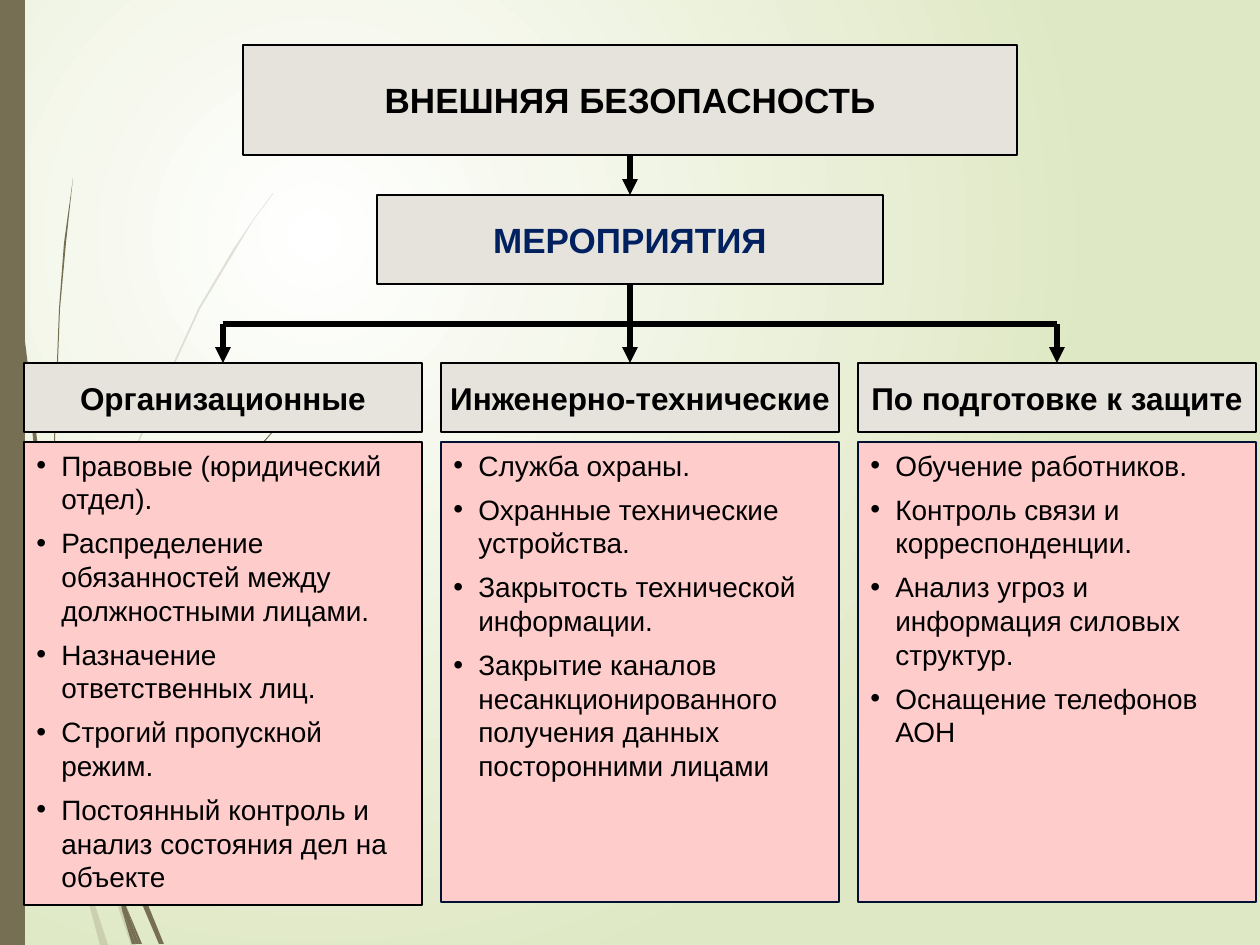
from dataclasses import dataclass

from lxml import etree
from pptx import Presentation
from pptx import util as u
from pptx.dml.color import RGBColor
from pptx.enum import shapes, text
from pptx.oxml.ns import qn


@dataclass(frozen=True)
class Theme:
    font: str = "Arial"
    ink: str = "000000"
    navy: str = "002060"
    list_edge: str = "001132"
    panel: str = "E5E3DB"
    pink: str = "FFCCCC"
    olive: str = "766F54"
    glow: str = "FFFFFF"
    meadow: str = "DFE8C4"
    title_size: int = 20
    heading_size: int = 18
    body_size: int = 16
    edge: float = 0.75
    arrow: int = 3


PX = 914400 / 126
WIDTH, HEIGHT = 1260, 945
COLUMN_LEFT, COLUMN_STEP, COLUMN_WIDTH = 24, 417, 398
HEADING_TOP, LIST_TOP, BRANCH_Y, CENTRE = 363, 442, 324, 630

FAINT_BLADES = [
    [(81, 765), (77, 751), (77, 769), (107, 874), (131, 945), (136, 945), (111, 872)],
    [(105, 945), (108, 945), (92, 896)],
    [(77, 736), (96, 582), (140, 440), (200, 309), (236, 249), (253, 221), (273, 194),
     (273, 193), (253, 220), (234, 248), (199, 307), (139, 438), (94, 581), (74, 736),
     (74, 738), (77, 751)],
    [(88, 900), (100, 945), (103, 945)],
    [(84, 872), (82, 861), (87, 891), (88, 900), (103, 945), (105, 945), (92, 896)],
]
DARK_BLADES = [
    [(6, 139), (18, 294), (34, 447), (58, 601), (59, 606), (57, 576), (57, 571),
     (38, 447), (19, 292), (8, 137), (5, 60), (4, 0), (3, 0), (4, 60)],
    [(118, 818), (115, 808), (115, 827), (137, 892), (159, 944), (164, 944), (142, 890)],
    [(63, 595), (60, 571), (55, 440), (60, 309), (66, 243), (73, 178), (64, 243),
     (59, 309), (54, 440), (57, 566), (62, 595)],
    [(139, 944), (142, 944), (126, 906)],
    [(115, 798), (130, 696), (165, 600), (213, 512), (241, 471), (256, 452), (272, 433),
     (271, 433), (255, 451), (241, 470), (212, 510), (163, 597), (127, 694), (111, 795),
     (115, 808)],
    [(122, 910), (132, 944), (136, 944)],
    [(121, 890), (115, 871), (121, 903), (122, 910), (136, 944), (139, 944), (126, 906)],
]

MEASURES = [
    ("Организационные", 463, Theme.ink, [
        "Правовые (юридический отдел).",
        "Распределение обязанностей между должностными лицами.",
        "Назначение ответственных лиц.",
        "Строгий пропускной режим.",
        "Постоянный контроль и анализ состояния дел на объекте"]),
    ("Инженерно-технические", 460, Theme.list_edge, [
        "Служба охраны.",
        "Охранные технические устройства.",
        "Закрытость технической информации.",
        "Закрытие каналов несанкционированного получения данных посторонними лицами"]),
    ("По подготовке к защите", 460, Theme.list_edge, [
        "Обучение работников.",
        "Контроль связи и корреспонденции.",
        "Анализ угроз и информация силовых структур.",
        "Оснащение телефонов АОН"]),
]


def px(length):
    return u.Emu(round(length * PX))


def rgb(value):
    return RGBColor.from_string(value)


def write(paragraph, words, size, color=Theme.ink, bold=False,
          align=text.PP_ALIGN.LEFT, before=0, bullet=False):
    paragraph.alignment = align
    paragraph.space_before = u.Pt(before)
    run = paragraph.add_run()
    run.text = words
    run.font.name = Theme.font
    run.font.size = u.Pt(size)
    run.font.bold = bold
    run.font.color.rgb = rgb(color)
    if bullet:
        props = paragraph._p.get_or_add_pPr()
        props.set("marL", str(px(25)))
        props.set("indent", str(px(-25)))
        etree.SubElement(props, qn("a:buFont"), typeface=Theme.font)
        etree.SubElement(props, qn("a:buChar"), char="•")


class Board:
    """Draws the scheme's elements on the current slide in one theme."""

    def __init__(self, slide, theme):
        self.slide = slide
        self.theme = theme

    def background(self):
        fill = self.slide.background.fill
        fill.gradient()
        for stop, color in zip(fill.gradient_stops, (self.theme.glow, self.theme.meadow)):
            stop.color.rgb = rgb(color)
        grad = self.slide.element.xpath(".//a:gradFill")[0]
        for linear in grad.findall(qn("a:lin")):
            grad.remove(linear)
        circle = etree.SubElement(grad, qn("a:path"), path="circle")
        etree.SubElement(circle, qn("a:fillToRect"),
                         l="50000", t="50000", r="100000", b="100000")

    def paint(self, shape, fill, edge=None):
        shape.shadow.inherit = False
        shape.fill.solid()
        shape.fill.fore_color.rgb = rgb(fill)
        if edge:
            shape.line.color.rgb = rgb(edge)
            shape.line.width = u.Pt(self.theme.edge)
        else:
            shape.line.fill.background()
        return shape

    def blade(self, points, opacity=100):
        builder = self.slide.shapes.build_freeform(*points[0], scale=PX)
        builder.add_line_segments(points[1:], close=True)
        shape = self.paint(builder.convert_to_shape(), self.theme.olive)
        if opacity < 100:
            color = shape._element.spPr.find(qn("a:solidFill"))[0]
            etree.SubElement(color, qn("a:alpha"), val=str(opacity * 1000))

    def box(self, left, top, width, height, fill, edge=None):
        shape = self.slide.shapes.add_shape(
            shapes.MSO_SHAPE.RECTANGLE, px(left), px(top), px(width), px(height))
        return self.paint(shape, fill, edge)

    def title(self, words, frame, size, color=Theme.ink):
        shape = self.box(*frame, self.theme.panel, self.theme.ink)
        body = shape.text_frame
        body.word_wrap = False
        body.vertical_anchor = text.MSO_ANCHOR.MIDDLE
        write(body.paragraphs[0], words, size, color, bold=True,
              align=text.PP_ALIGN.CENTER)
        return shape

    def bullets(self, items, frame, edge):
        body = self.box(*frame, self.theme.pink, edge).text_frame
        body.word_wrap = True
        body.vertical_anchor = text.MSO_ANCHOR.TOP
        for index, item in enumerate(items):
            paragraph = body.add_paragraph() if index else body.paragraphs[0]
            write(paragraph, item, self.theme.body_size, before=6, bullet=True)

    def link(self, start, end, source=None, target=None, arrow=True):
        line = self.slide.shapes.add_connector(
            shapes.MSO_CONNECTOR.STRAIGHT, *map(px, start + end))
        line.line.color.rgb = rgb(self.theme.ink)
        line.line.width = u.Pt(self.theme.arrow)
        if arrow:
            etree.SubElement(line.line._get_or_add_ln(), qn("a:tailEnd"), type="triangle")
        etree.SubElement(line._element.spPr, qn("a:effectLst"))
        if source:
            line.begin_connect(source, 2)
        if target:
            line.end_connect(target, 0)


def main():
    deck = Presentation()
    deck.slide_width, deck.slide_height = px(WIDTH), px(HEIGHT)
    theme = Theme()
    board = Board(deck.slides.add_slide(deck.slide_layouts[6]), theme)
    board.background()
    for points in FAINT_BLADES:
        board.blade(points, opacity=20)
    for points in DARK_BLADES:
        board.blade(points)
    board.box(0, 0, 25, HEIGHT, theme.olive)

    security = board.title("ВНЕШНЯЯ БЕЗОПАСНОСТЬ", (243, 45, 774, 110), theme.title_size)
    actions = board.title("МЕРОПРИЯТИЯ", (377, 195, 506, 89), theme.title_size, theme.navy)
    headings = []
    for column, (heading, height, edge, items) in enumerate(MEASURES):
        left = COLUMN_LEFT + column * COLUMN_STEP
        headings.append(board.title(
            heading, (left, HEADING_TOP, COLUMN_WIDTH, 69), theme.heading_size))
        board.bullets(items, (left, LIST_TOP, COLUMN_WIDTH, height), edge)

    first = COLUMN_LEFT + COLUMN_WIDTH // 2
    last = first + 2 * COLUMN_STEP
    board.link((first, BRANCH_Y), (last, BRANCH_Y), arrow=False)
    for x, heading in ((first, headings[0]), (last, headings[-1])):
        board.link((x, BRANCH_Y), (x, HEADING_TOP), target=heading)
    board.link((CENTRE, 155), (CENTRE, 195), security, actions)
    board.link((CENTRE, 284), (CENTRE, HEADING_TOP), actions)
    deck.save("out.pptx")


if __name__ == "__main__":
    main()
